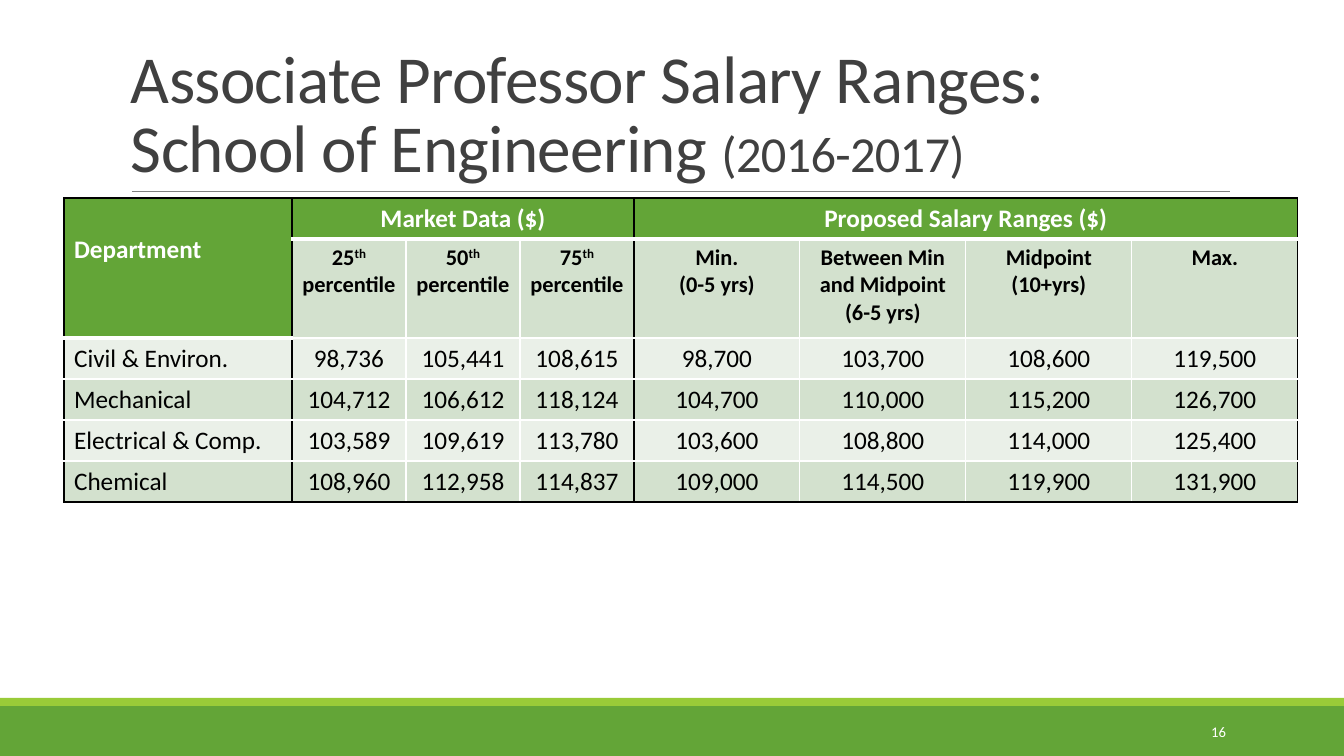
from lxml.etree import SubElement
from pptx import Presentation
from pptx.dml.color import RGBColor
from pptx.enum.shapes import MSO_CONNECTOR as CONNECTOR, MSO_SHAPE as SHAPE
from pptx.enum.text import MSO_ANCHOR as ANCHOR, PP_ALIGN as ALIGN
from pptx.oxml.ns import qn
from pptx.util import Pt

PX = 914400 * 10 // 1008
WHITE = RGBColor(0xFF, 0xFF, 0xFF)
BLACK = RGBColor(0, 0, 0)
TITLE_GRAY = RGBColor(0x40, 0x40, 0x40)
RULE_GRAY = RGBColor(0x80, 0x80, 0x80)
GREEN = RGBColor(0x63, 0xA5, 0x37)
LIME = RGBColor(0x99, 0xCB, 0x38)
SAGE = RGBColor(0xD3, 0xE1, 0xCE)
PALE = RGBColor(0xEA, 0xF0, 0xE8)


def write(frame, text, size=18, color=BLACK, bold=False, align=ALIGN.CENTER,
          line_spacing=None, accent_size=None, accent_raise=0, tracking=0):
    """Fill a text frame: newlines part paragraphs, ^ marks enclose accented runs."""
    frame.word_wrap = True
    for index, line in enumerate(text.split("\n")):
        paragraph = frame.add_paragraph() if index else frame.paragraphs[0]
        paragraph.alignment = align
        paragraph.line_spacing = line_spacing
        for part, words in enumerate(line.split("^")):
            if not words:
                continue
            accented = part % 2
            run = paragraph.add_run()
            run.text = words
            run.font.name = "Calibri"
            run.font.size = Pt(accent_size if accented and accent_size else size)
            run.font.bold = bold
            run.font.color.rgb = color
            properties = run.font._element
            if accented and accent_raise:
                properties.set("baseline", str(accent_raise * 1000))
            if tracking:
                properties.set("spc", str(int(tracking * 100)))


def add_border(cell, side, color, width):
    line = SubElement(cell._tc.get_or_add_tcPr(), qn(f"a:ln{side}"), w=str(Pt(width)))
    fill = SubElement(line, qn("a:solidFill"))
    SubElement(fill, qn("a:srgbClr"), val=str(color))


deck = Presentation()
deck.slide_width, deck.slide_height = 1344 * PX, 756 * PX
slide = deck.slides.add_slide(deck.slide_layouts[6])
shapes = slide.shapes

# Footer bands and title rule
for top, height, color in ((706, 50, GREEN), (698, 8, LIME)):
    band = shapes.add_shape(SHAPE.RECTANGLE, 0, top * PX, 1344 * PX, height * PX)
    band.shadow.inherit = False
    band.fill.solid()
    band.fill.fore_color.rgb = color
    band.line.fill.background()

title_rule = shapes.add_connector(CONNECTOR.STRAIGHT, 132 * PX, 191 * PX, 1230 * PX, 191 * PX)
title_rule.line.color.rgb = RULE_GRAY
title_rule.line.width = Pt(0.5)
SubElement(title_rule._element.spPr, qn("a:effectLst"))

# Title
title = shapes.add_textbox(121 * PX, 31 * PX, 1109 * PX, 160 * PX).text_frame
title.vertical_anchor = ANCHOR.BOTTOM
write(title, "Associate Professor Salary Ranges:\nSchool of Engineering ^(2016-2017)^",
      size=48, color=TITLE_GRAY, align=ALIGN.LEFT, line_spacing=0.85,
      accent_size=36, tracking=-0.5)

# Salary table
COLUMN_WIDTHS = [228] + [114] * 3 + [166] * 4
ROW_HEIGHTS = [41, 99] + [41] * 4
GROUP_ENDS = (0, 3, 7)
SALARIES = [
    ["Department", "Market Data ($)", "", "", "Proposed Salary Ranges ($)", "", "", ""],
    ["", "25^th^ percentile", "50^th^ percentile", "75^th^ percentile", "Min.\n(0-5 yrs)",
     "Between Min and Midpoint\n(6-5 yrs)", "Midpoint\n(10+yrs)", "Max."],
    ["Civil & Environ.", "98,736", "105,441", "108,615",
     "98,700", "103,700", "108,600", "119,500"],
    ["Mechanical", "104,712", "106,612", "118,124",
     "104,700", "110,000", "115,200", "126,700"],
    ["Electrical & Comp.", "103,589", "109,619", "113,780",
     "103,600", "108,800", "114,000", "125,400"],
    ["Chemical", "108,960", "112,958", "114,837",
     "109,000", "114,500", "119,900", "131,900"],
]
last_row = len(SALARIES) - 1

table = shapes.add_table(len(ROW_HEIGHTS), len(COLUMN_WIDTHS), 64 * PX, 198 * PX,
                         sum(COLUMN_WIDTHS) * PX, sum(ROW_HEIGHTS) * PX).table
table.first_row = table.horz_banding = False
for column, width in zip(table.columns, COLUMN_WIDTHS):
    column.width = width * PX
for row, height in zip(table.rows, ROW_HEIGHTS):
    row.height = height * PX
for first, last in (((0, 0), (1, 0)), ((0, 1), (0, 3)), ((0, 4), (0, 7))):
    table.cell(*first).merge(table.cell(*last))

for r, values in enumerate(SALARIES):
    for c, value in enumerate(values):
        cell = table.cell(r, c)
        heading = r == 0 or (r == 1 and c == 0)
        starts_group = c == 0 or c - 1 in GROUP_ENDS
        add_border(cell, "L", BLACK if heading or starts_group else WHITE, 1)
        add_border(cell, "R", BLACK if heading or c in GROUP_ENDS else WHITE, 1)
        add_border(cell, "T", BLACK if r == 0 else WHITE, 1)
        add_border(cell, "B", BLACK if r == last_row else WHITE, 3 if heading else 1)
        cell.fill.solid()
        cell.fill.fore_color.rgb = GREEN if heading else SAGE if r % 2 else PALE
        if value:
            write(cell.text_frame, value, size=16 if r == 1 else 18,
                  color=WHITE if heading else BLACK, bold=r < 2,
                  align=ALIGN.CENTER if c else ALIGN.LEFT, accent_raise=30)
table.cell(0, 0).margin_top = 36 * PX

# Slide number
number = shapes.add_textbox(1092 * PX, 712 * PX, 144 * PX, 40 * PX).text_frame
number.vertical_anchor = ANCHOR.MIDDLE
write(number, "16", size=10.5, color=WHITE, align=ALIGN.RIGHT)

deck.save("out.pptx")
